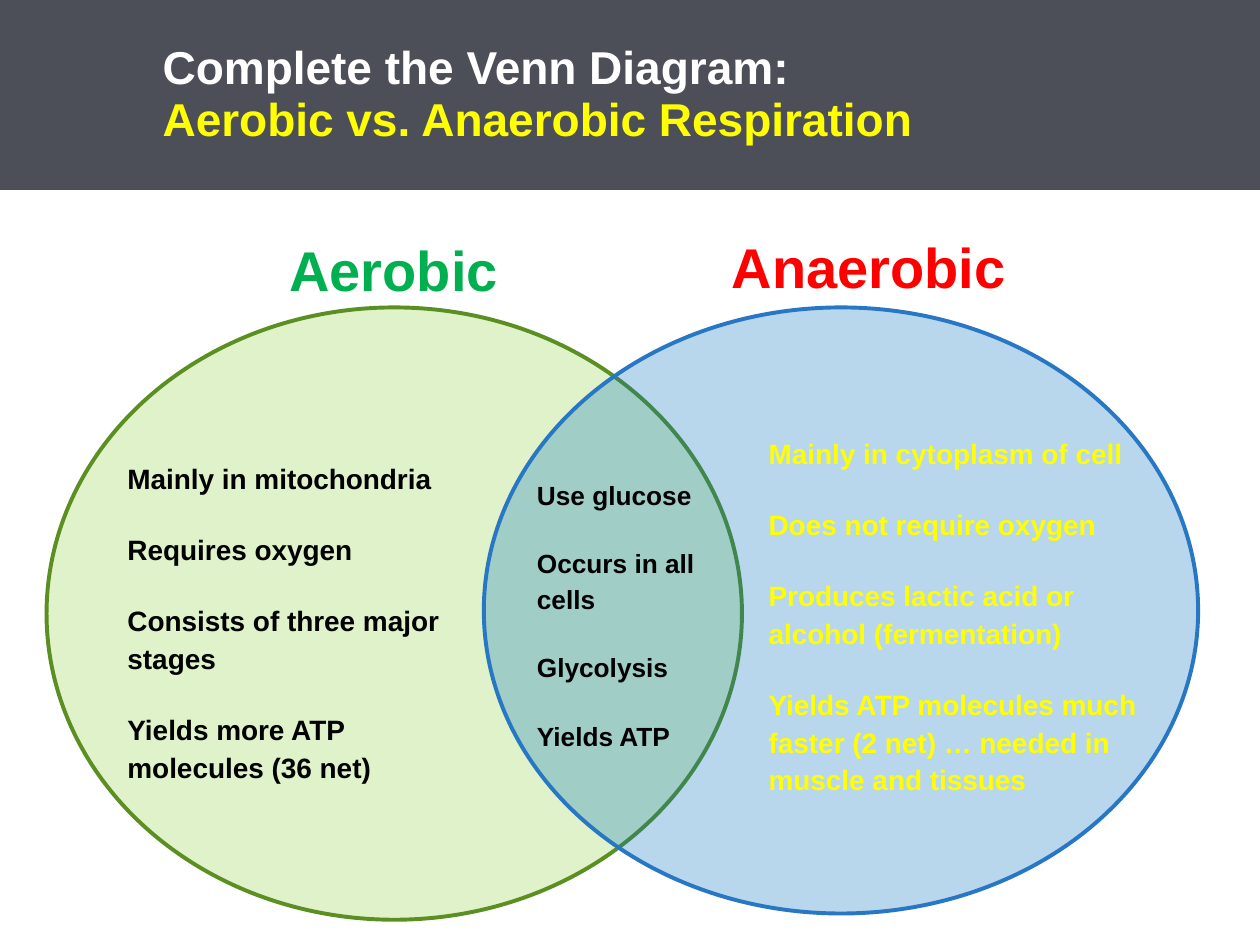
"""Build a Venn diagram slide comparing aerobic and anaerobic respiration."""
import pptx
import pptx.dml.color
import pptx.enum.shapes
import pptx.enum.text
import pptx.oxml.ns
import pptx.util
from lxml import etree

Pt = pptx.util.Pt
RGBColor = pptx.dml.color.RGBColor
ALIGN = pptx.enum.text.PP_ALIGN
ANCHOR = pptx.enum.text.MSO_ANCHOR
AUTO_SIZE = pptx.enum.text.MSO_AUTO_SIZE

WHITE = RGBColor(0xFF, 0xFF, 0xFF)
BLACK = RGBColor(0x00, 0x00, 0x00)
YELLOW = RGBColor(0xFF, 0xFF, 0x00)
SLATE = RGBColor(0x4D, 0x4F, 0x58)
GREEN = RGBColor(0x00, 0xB0, 0x50)
RED = RGBColor(0xFF, 0x00, 0x00)
PALE_GREEN = RGBColor(0xDF, 0xF2, 0xC9)
DARK_GREEN = RGBColor(0x5B, 0x8F, 0x22)
BLUE = RGBColor(0x00, 0x70, 0xC0)
DARK_BLUE = RGBColor(0x28, 0x77, 0xC4)


def add_bold_run(paragraph, text, size, color):
    run = paragraph.add_run()
    run.text = text
    run.font.name = "Arial"
    run.font.size = Pt(size)
    run.font.bold = True
    run.font.color.rgb = color


def set_insets(frame, left, top, right, bottom):
    frame.margin_left, frame.margin_top = Pt(left), Pt(top)
    frame.margin_right, frame.margin_bottom = Pt(right), Pt(bottom)
    frame.word_wrap = True


presentation = pptx.Presentation()
presentation.slide_width, presentation.slide_height = Pt(720), Pt(540)
slide = presentation.slides.add_slide(presentation.slide_layouts[5])

title = slide.shapes.title
title.left, title.top, title.width, title.height = Pt(0), Pt(0), Pt(720), Pt(108.5)
title.fill.solid()
title.fill.fore_color.rgb = SLATE
set_insets(title.text_frame, 92.9, 5, 12, 5)
title.text_frame.auto_size = AUTO_SIZE.NONE
title.text_frame.vertical_anchor = ANCHOR.MIDDLE
heading = title.text_frame.paragraphs[0]
heading.alignment = ALIGN.LEFT
heading.line_spacing = 0.95
add_bold_run(heading, "Complete the Venn Diagram:", 26.3, WHITE)
heading.add_line_break()
add_bold_run(heading, "Aerobic vs. Anaerobic Respiration", 26.3, YELLOW)

circles = [
    (26.6, 175.7, 397.4, 349.9, PALE_GREEN, DARK_GREEN, 100),
    (276.5, 175.7, 408.2, 346.3, BLUE, DARK_BLUE, 28),
]
for left, top, width, height, fill, outline, opacity in circles:
    circle = slide.shapes.add_shape(
        pptx.enum.shapes.MSO_SHAPE.OVAL, Pt(left), Pt(top), Pt(width), Pt(height))
    circle.shadow.inherit = False
    circle.fill.solid()
    circle.fill.fore_color.rgb = fill
    circle.line.color.rgb = outline
    circle.line.width = Pt(2.25)
    if opacity < 100:
        fill_color = circle.fill._xPr.find(".//" + pptx.oxml.ns.qn("a:srgbClr"))
        etree.SubElement(fill_color, pptx.oxml.ns.qn("a:alpha"), val=str(opacity * 1000))

labels = [
    ("Aerobic", 154.8, 125.3, 140.4, GREEN),
    ("Anaerobic", 403.9, 123.5, 185, RED),
]
for name, left, top, width, color in labels:
    label = slide.shapes.add_textbox(Pt(left), Pt(top), Pt(width), Pt(48.2))
    set_insets(label.text_frame, 7.2, 3.6, 7.2, 3.6)
    paragraph = label.text_frame.paragraphs[0]
    paragraph.alignment = ALIGN.CENTER
    paragraph.line_spacing = 1.15
    add_bold_run(paragraph, name, 32, color)

regions = [
    (59.8, 254.2, 214.6, 205.9, 16, BLACK, [
        "Mainly in mitochondria",
        "Requires oxygen",
        "Consists of three major stages",
        "Yields more ATP molecules (36 net)",
    ]),
    (426.2, 239.8, 231.1, 219.6, 16, YELLOW, [
        "Mainly in cytoplasm of cell",
        "Does not require oxygen",
        "Produces lactic acid or alcohol (fermentation)",
        "Yields ATP molecules much faster (2 net) … needed in muscle and tissues",
    ]),
    (293.8, 264.2, 110.9, 179.3, 15, BLACK, [
        "Use glucose",
        "Occurs in all cells",
        "Glycolysis",
        "Yields ATP",
    ]),
]
for left, top, width, height, size, color, facts in regions:
    region = slide.shapes.add_textbox(Pt(left), Pt(top), Pt(width), Pt(height))
    set_insets(region.text_frame, 13, 7.2, 0, 7.2)
    for index, fact in enumerate(facts):
        paragraph = region.text_frame.add_paragraph() if index else region.text_frame.paragraphs[0]
        paragraph.line_spacing = 1.13
        paragraph.space_before = Pt(18.8)
        add_bold_run(paragraph, fact, size, color)

presentation.save("out.pptx")
